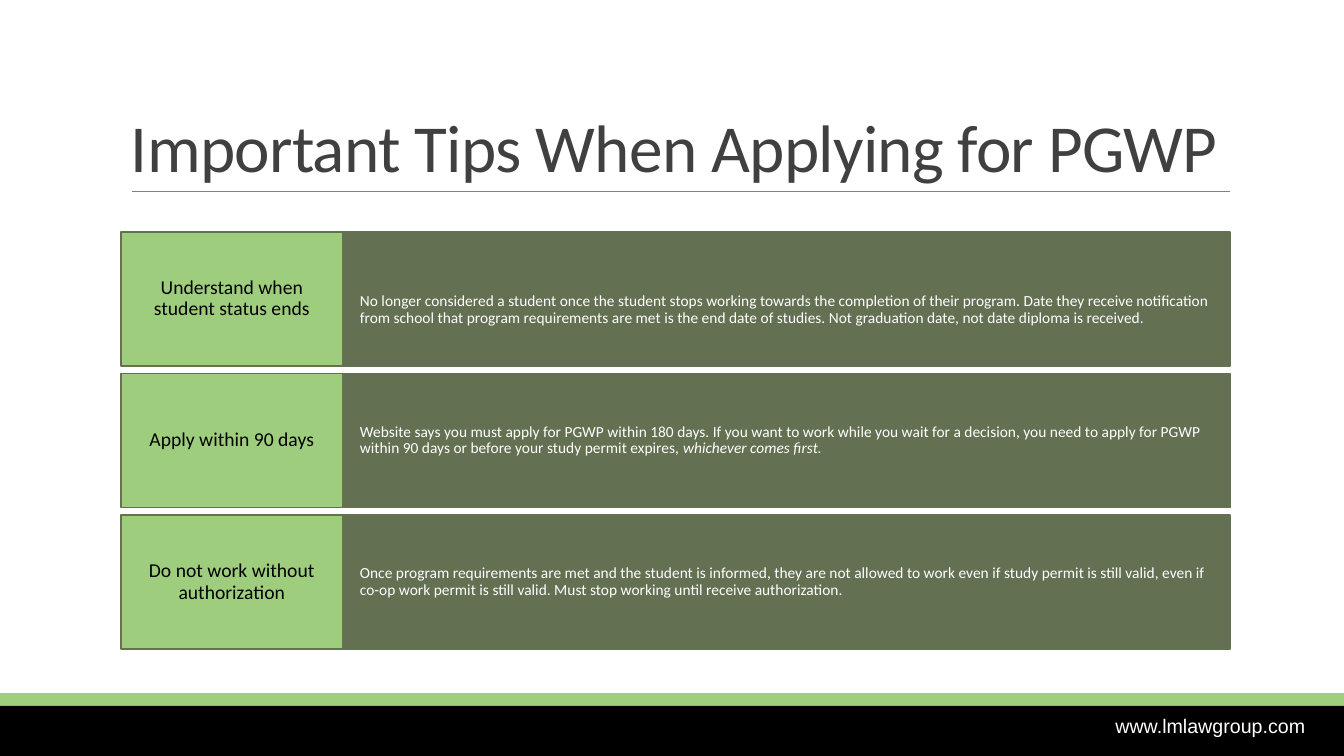
"""Build a slide of tips for applying for a PGWP."""
from pptx import Presentation
from pptx.dml.color import RGBColor
from pptx.enum.shapes import MSO_CONNECTOR, MSO_SHAPE
from pptx.enum.text import MSO_ANCHOR, PP_ALIGN
from pptx.util import Inches, Pt
from lxml import etree

TITLE = "Important Tips When Applying for PGWP"
WEBSITE = "www.lmlawgroup.com"
TIPS = [
    ("Understand when student status ends",
     [("No longer considered a student once the student stops working towards the "
       "completion of their program. Date they receive notification from school that "
       "program requirements are met is the end date of studies. Not graduation date, "
       "not date diploma is received.", False)], 0.56),
    ("Apply within 90 days",
     [("Website says you must apply for PGWP within 180 days. If you want to work while "
       "you wait for a decision, you need to apply for PGWP within 90 days or before "
       "your study permit expires, ", False),
      ("whichever comes first.", True)], 0.34),
    ("Do not work without authorization",
     [("Once program requirements are met and the student is informed, they are not "
       "allowed to work even if study permit is still valid, even if co-op work permit "
       "is still valid. Must stop working until receive authorization.", False)], 0.34),
]
BLACK, WHITE, GREY, RULE = "000000", "FFFFFF", "404040", "808080"
OLIVE, LIGHT, BAND = "637052", "9ECE7D", "9FCF7D"
LEFT, TOP, LABEL_W, DETAIL_W, ROW_H, PITCH = 1.2, 2.3, 2.2, 8.8, 1.33, 1.405


def rgb(code):
    return RGBColor.from_string(code)


def add_rect(slide, box, fill, line=None, width=0):
    sp = slide.shapes.add_shape(MSO_SHAPE.RECTANGLE, *map(Inches, box))
    sp.shadow.inherit = False
    sp.fill.solid()
    sp.fill.fore_color.rgb = rgb(fill)
    if line:
        sp.line.color.rgb = rgb(line)
        sp.line.width = Pt(width)
    else:
        sp.line.fill.background()
    return sp


def write(sp, runs, size, color, align=PP_ALIGN.LEFT, anchor=MSO_ANCHOR.MIDDLE,
          spacing=0.9, insets=(0.1, 0.05, 0.1, 0.05), font="Calibri"):
    tf = sp.text_frame
    tf.word_wrap = True
    tf.vertical_anchor = anchor
    tf.margin_left, tf.margin_top, tf.margin_right, tf.margin_bottom = map(Inches, insets)
    p = tf.paragraphs[0]
    p.alignment = align
    p.line_spacing = spacing
    p.font.name = font
    p.font.size = Pt(size)
    p.font.color.rgb = rgb(color)
    for text, italic in runs:
        r = p.add_run()
        r.text = text
        if italic:
            r.font.italic = True
    return p


def add_rule(slide, x1, x2, y):
    line = slide.shapes.add_connector(
        MSO_CONNECTOR.STRAIGHT, Inches(x1), Inches(y), Inches(x2), Inches(y))
    line.line.color.rgb = rgb(RULE)
    line.line.width = Pt(0.5)
    sp_pr = line._element.spPr
    etree.SubElement(sp_pr, sp_pr.tag.split("}")[0].replace("presentationml", "drawingml")
                     .replace("/2006/main", "/2006/main") + "}effectLst")


def add_tip(slide, row, label, detail, inset_top):
    y = TOP + row * PITCH
    sp = add_rect(slide, (LEFT + LABEL_W, y, DETAIL_W, ROW_H), OLIVE, OLIVE, 1.25)
    write(sp, detail, 11, WHITE, insets=(0.17, inset_top, 0.17, 0.34))
    sp = add_rect(slide, (LEFT, y, LABEL_W, ROW_H), LIGHT, OLIVE, 1.25)
    write(sp, [(label, False)], 14, BLACK, PP_ALIGN.CENTER, insets=(0.12, 0.13, 0.12, 0.13))


def main():
    prs = Presentation()
    prs.slide_width, prs.slide_height = Inches(13.33), Inches(7.5)
    slide = prs.slides.add_slide(prs.slide_layouts[6])

    add_rect(slide, (0, 7, 13.33, 0.5), BLACK)
    add_rect(slide, (0, 6.91, 13.33, 0.05), BAND, BAND, 5)
    add_rule(slide, 1.31, 12.2, 1.9)

    website = slide.shapes.add_textbox(*map(Inches, (10.93, 7.03, 2.15, 0.34)))
    write(website, [(WEBSITE, False)], 14, WHITE, PP_ALIGN.CENTER, MSO_ANCHOR.TOP,
          spacing=1.0, font="Arial")
    title = slide.shapes.add_textbox(*map(Inches, (1.2, 0.31, 11, 1.59)))
    p = write(title, [(TITLE, False)], 48, GREY, anchor=MSO_ANCHOR.BOTTOM, spacing=0.85)
    p.runs[0]._r.get_or_add_rPr().set("spc", "-50")

    for row, (label, detail, inset_top) in enumerate(TIPS):
        add_tip(slide, row, label, detail, inset_top)
    prs.save("out.pptx")


if __name__ == "__main__":
    main()
